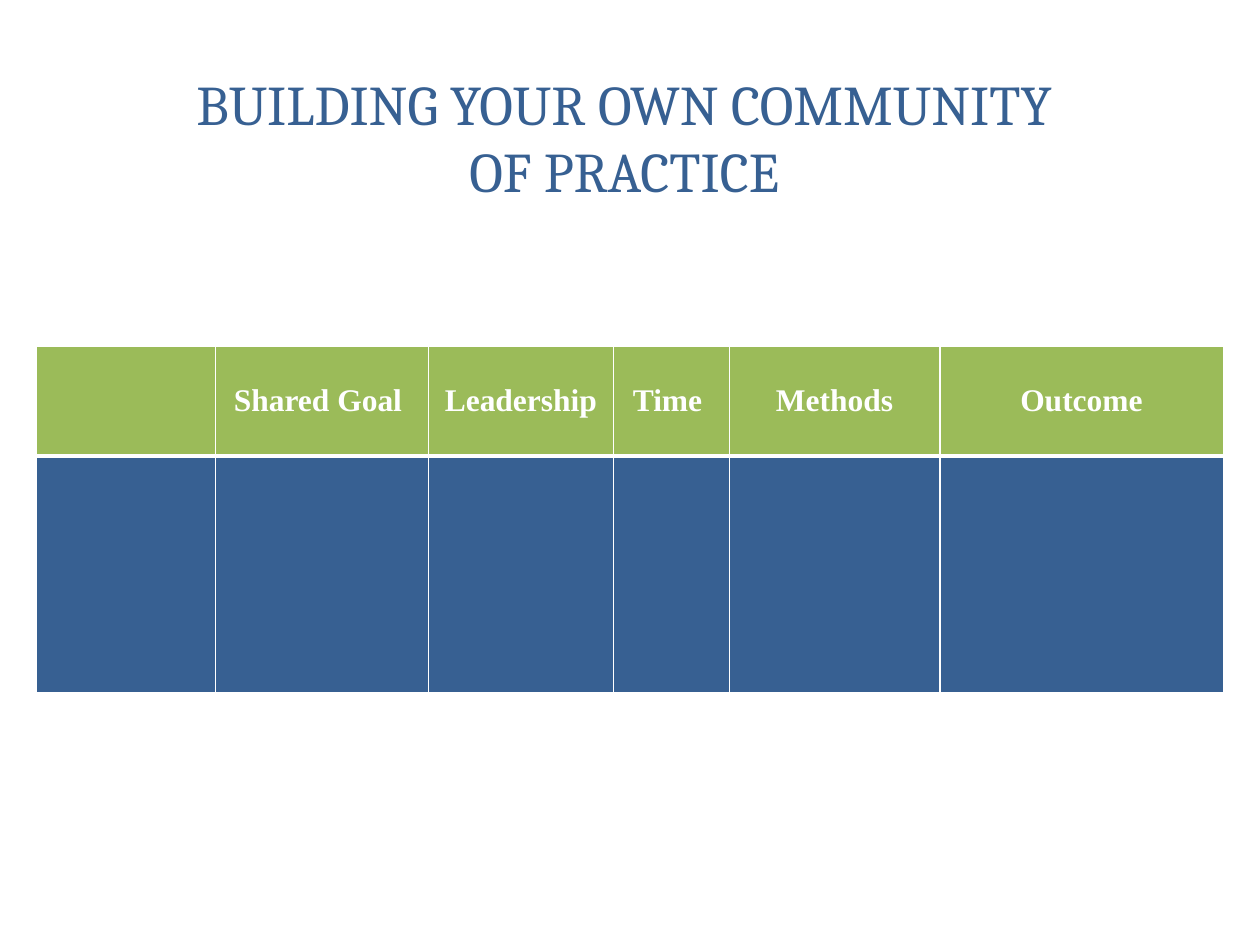
from dataclasses import dataclass

from lxml.etree import SubElement
from pptx import Presentation
from pptx.dml.color import RGBColor
from pptx.enum.text import MSO_ANCHOR, PP_ALIGN
from pptx.oxml.ns import qn
from pptx.util import Inches, Pt

COLORS = {"blue": "376092", "green": "9BBB59", "white": "FFFFFF"}
TITLE_FORMAT = {"name": "Cambria", "size": Pt(32), "bold": False}
HEADER_FORMAT = {"name": "Times New Roman", "size": Pt(18), "bold": True}


@dataclass
class Column:
    heading: str
    width: float


@dataclass
class Row:
    height: float
    fill: str
    bottom_border: float


COLUMNS = [
    Column("", 1.42),
    Column("Shared Goal ", 1.69),
    Column("Leadership", 1.47),
    Column("Time ", 0.92),
    Column("Methods", 1.67),
    Column("Outcome", 2.25),
]
ROWS = [Row(0.87, "green", 3), Row(1.88, "blue", 1)]


def write_text(text_frame, text: str, font_format: dict, color: str) -> None:
    text_frame.text = text
    for paragraph in text_frame.paragraphs:
        paragraph.alignment = PP_ALIGN.CENTER
        for run in paragraph.runs:
            for attribute, value in font_format.items():
                setattr(run.font, attribute, value)
            run.font.color.rgb = RGBColor.from_string(COLORS[color])


def set_borders(cell, top: float, bottom: float) -> None:
    properties = cell._tc.get_or_add_tcPr()
    widths = {"a:lnL": 1, "a:lnR": 1, "a:lnT": top, "a:lnB": bottom}
    for tag, width in widths.items():
        line = SubElement(properties, qn(tag), w=str(Pt(width)))
        fill = SubElement(line, qn("a:solidFill"))
        SubElement(fill, qn("a:srgbClr"), val=COLORS["white"])


def add_planning_table(slide, left: float, top: float) -> None:
    width = sum(column.width for column in COLUMNS)
    height = sum(row.height for row in ROWS)
    table = slide.shapes.add_table(
        len(ROWS), len(COLUMNS),
        Inches(left), Inches(top), Inches(width), Inches(height),
    ).table
    for index, column in enumerate(COLUMNS):
        table.columns[index].width = Inches(column.width)

    top_border = 1
    for row_index, row in enumerate(ROWS):
        table.rows[row_index].height = Inches(row.height)
        for column_index, column in enumerate(COLUMNS):
            cell = table.cell(row_index, column_index)
            # Borders come before the fill in the cell properties
            set_borders(cell, top_border, row.bottom_border)
            cell.fill.solid()
            cell.fill.fore_color.rgb = RGBColor.from_string(COLORS[row.fill])
            cell.vertical_anchor = MSO_ANCHOR.MIDDLE
            if row_index == 0 and column.heading:
                write_text(cell.text_frame, column.heading, HEADER_FORMAT, "white")
        top_border = row.bottom_border


def main() -> None:
    presentation = Presentation()
    presentation.slide_width = Inches(10)
    presentation.slide_height = Inches(7.5)
    slide = presentation.slides.add_slide(presentation.slide_layouts[5])

    # Title
    title = slide.shapes.title
    title.left, title.top = Inches(0.42), Inches(0.5)
    title.width, title.height = Inches(9.17), Inches(1.49)
    title.text_frame.vertical_anchor = MSO_ANCHOR.TOP
    write_text(title.text_frame, "BUILDING YOUR OWN COMMUNITY \vOF PRACTICE ",
               TITLE_FORMAT, "blue")

    # Planning table
    add_planning_table(slide, 0.29, 2.75)

    presentation.save("out.pptx")


if __name__ == "__main__":
    main()
